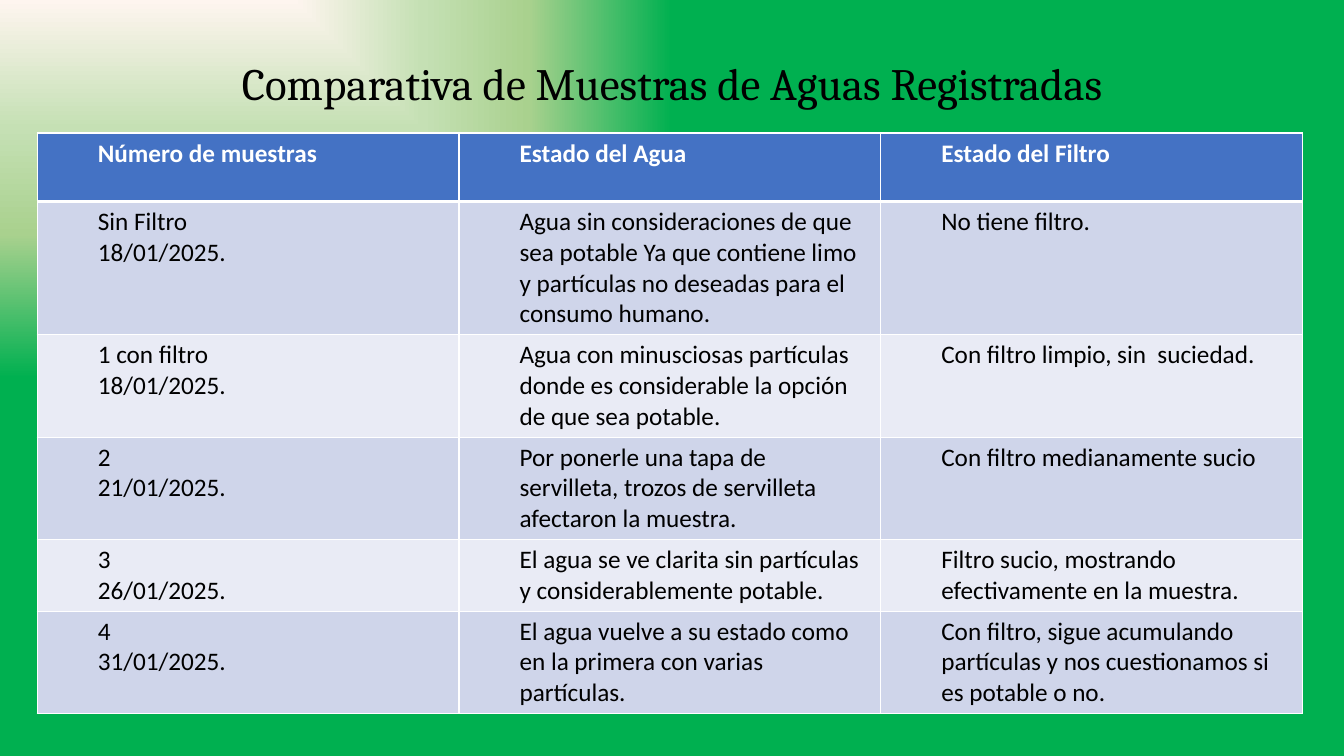
from pptx import Presentation
from pptx.dml.color import RGBColor
from pptx.enum.text import MSO_ANCHOR, MSO_AUTO_SIZE, PP_ALIGN
from pptx.oxml import parse_xml
from pptx.oxml.ns import nsdecls
from pptx.util import Inches, Pt

WHITE, BLACK = "FFFFFF", "000000"
HEADER_FILL, BAND_FILLS = "4472C4", ("CFD5EA", "E9EBF5")
GRADIENT = [(0, "FEF5EF"), (34, "C5E0B4"), (62, "A9D18E"), (100, "00B050")]

HEADERS = ["Número de muestras", "Estado del Agua", "Estado del Filtro"]
SAMPLES = [
    ["Sin Filtro\n18/01/2025.",
     "Agua sin consideraciones de que sea potable Ya que contiene limo "
     "y partículas no deseadas para el consumo humano.",
     "No tiene filtro."],
    ["1 con filtro\n18/01/2025.",
     "Agua con minusciosas partículas donde es considerable la opción "
     "de que sea potable.",
     "Con filtro limpio, sin  suciedad."],
    ["2\n21/01/2025.",
     "Por ponerle una tapa de servilleta, trozos de servilleta "
     "afectaron la muestra.",
     "Con filtro medianamente sucio"],
    ["3\n26/01/2025.",
     "El agua se ve clarita sin partículas y considerablemente potable.",
     "Filtro sucio, mostrando efectivamente en la muestra."],
    ["4\n31/01/2025.",
     "El agua vuelve a su estado como en la primera con varias partículas.",
     "Con filtro, sigue acumulando partículas y nos cuestionamos si "
     "es potable o no."],
]


def rgb(color):
    return RGBColor.from_string(color)


def set_font(p, name, size, color, bold=False):
    p.font.name, p.font.size, p.font.bold = name, Pt(size), bold
    p.font.color.rgb = rgb(color)


def set_background(s):
    """Gradient spreading from the top left corner."""
    s.background.fill.gradient()
    grad = s.background._cSld.xpath("p:bg/p:bgPr/a:gradFill")[0]
    stops = "".join(f'<a:gs pos="{pos * 1000}"><a:srgbClr val="{color}"/></a:gs>'
                    for pos, color in GRADIENT)
    grad.getparent().replace(grad, parse_xml(
        f'<a:gradFill {nsdecls("a")} rotWithShape="1"><a:gsLst>{stops}</a:gsLst>'
        '<a:path path="rect"><a:fillToRect r="100000" b="100000"/></a:path>'
        '</a:gradFill>'))


def set_title(s, text):
    sp = s.shapes.title
    sp.left, sp.top = Inches(0.92), Inches(0.13)
    sp.width, sp.height = Inches(11.5), Inches(1.45)
    tf = sp.text_frame
    tf.text = text
    tf.auto_size = MSO_AUTO_SIZE.NONE
    tf.vertical_anchor = MSO_ANCHOR.MIDDLE
    p = tf.paragraphs[0]
    p.alignment, p.line_spacing = PP_ALIGN.CENTER, 0.9
    set_font(p, "Cambria", 32, BLACK)


def set_borders(cell, top, bottom):
    tcPr = cell._tc.get_or_add_tcPr()
    for side, width in zip("LRTB", (1, 1, top, bottom)):
        tcPr.append(parse_xml(
            f'<a:ln{side} {nsdecls("a")} w="{Pt(width)}"><a:solidFill>'
            f'<a:srgbClr val="{WHITE}"/></a:solidFill></a:ln{side}>'))


def fill_cell(cell, text, row):
    header = row == 0
    set_borders(cell, top=3 if row == 1 else 1, bottom=3 if header else 1)
    cell.fill.solid()
    cell.fill.fore_color.rgb = rgb(HEADER_FILL if header else BAND_FILLS[(row - 1) % 2])
    cell.text = text
    for p in cell.text_frame.paragraphs:
        p.level = 1
        pPr = p._p.get_or_add_pPr()
        pPr.set("marL", str(Inches(0.5)))
        pPr.set("indent", "0")
        set_font(p, "Calibri", 18, WHITE if header else BLACK, bold=header)


def add_samples_table(s):
    rows = [HEADERS] + SAMPLES
    # Rows grow with their text from this minimum height
    table = s.shapes.add_table(len(rows), len(HEADERS), Inches(0.37), Inches(1.32),
                               Inches(12.55), Inches(0.68 * len(rows))).table
    for i, row in enumerate(rows):
        for j, text in enumerate(row):
            fill_cell(table.cell(i, j), text, i)


def main():
    prs = Presentation()
    prs.slide_width, prs.slide_height = Inches(13.33), Inches(7.5)
    s = prs.slides.add_slide(prs.slide_layouts[5])
    set_background(s)
    set_title(s, "Comparativa de Muestras de Aguas Registradas")
    add_samples_table(s)
    prs.save("out.pptx")


if __name__ == "__main__":
    main()
